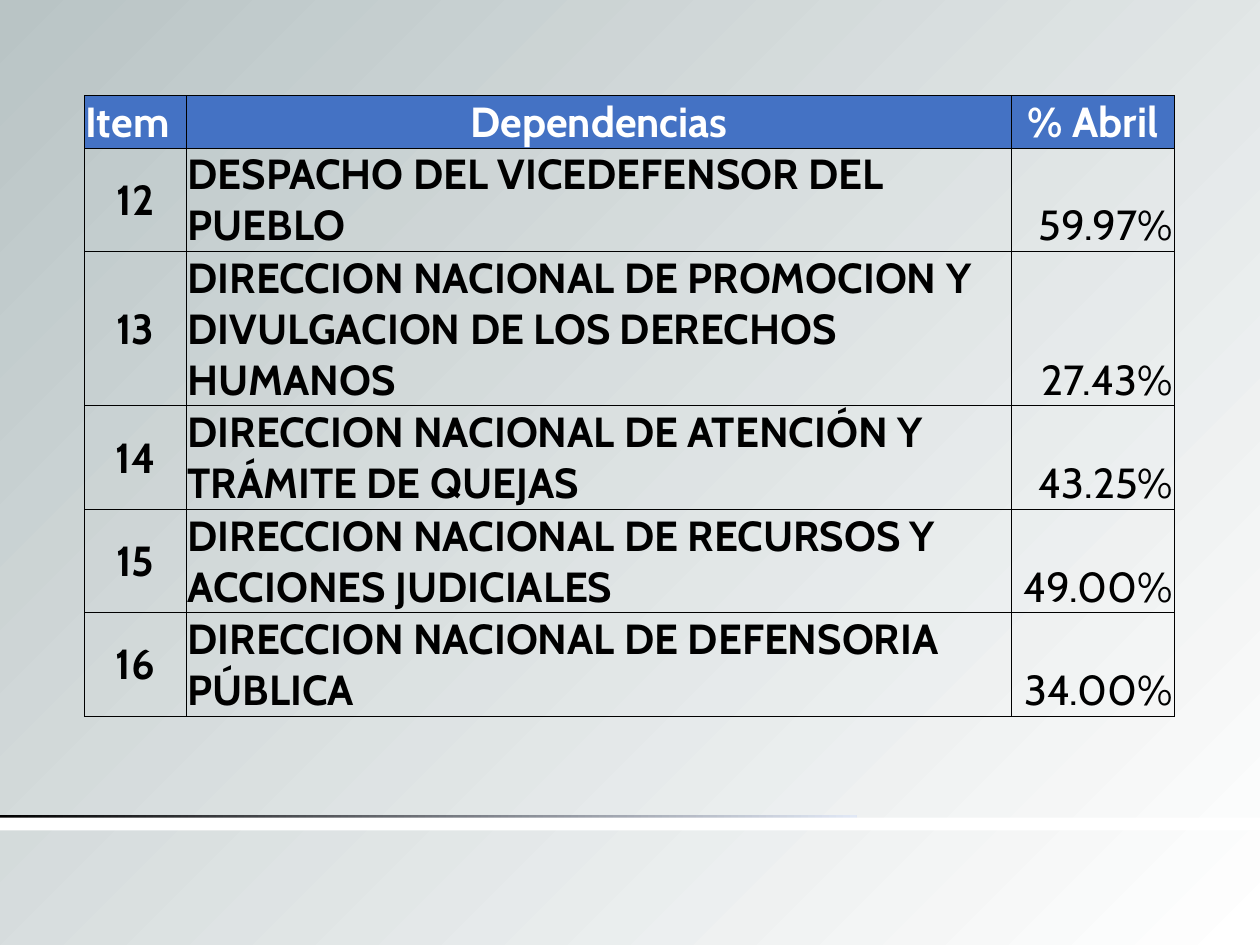
from dataclasses import dataclass

from lxml import etree
from pptx import Presentation
from pptx.dml.color import RGBColor
from pptx.enum.shapes import MSO_SHAPE
from pptx.enum.text import MSO_ANCHOR, PP_ALIGN
from pptx.oxml.ns import qn
from pptx.util import Inches, Pt

RECT = MSO_SHAPE.RECTANGLE
LEFT, CENTER, RIGHT = PP_ALIGN.LEFT, PP_ALIGN.CENTER, PP_ALIGN.RIGHT
MIDDLE, BOTTOM = MSO_ANCHOR.MIDDLE, MSO_ANCHOR.BOTTOM


@dataclass(frozen=True)
class Theme:
    font: str = "Cabin"
    size: int = 24
    text: str = "000000"
    light: str = "FFFFFF"
    header: str = "4472C4"
    shade: str = "B9C4C5"
    rule_end: str = "E1E8F5"
    border: float = 0.5
    inset: float = 0.01


class SlideBuilder:
    """Draws on one slide; lengths are shares of the slide's size."""

    def __init__(self, prs, theme):
        self.theme = theme
        self.width, self.height = prs.slide_width, prs.slide_height
        self.slide = prs.slides.add_slide(prs.slide_layouts[6])

    def x(self, share):
        return round(self.width * share)

    def y(self, share):
        return round(self.height * share)

    def gradient(self, fill, *colors):
        fill.gradient()
        for stop, color in zip(fill.gradient_stops, colors):
            stop.color.rgb = RGBColor.from_string(color)

    def background(self, focus, edge):
        """Circular gradient spreading from the bottom right corner."""
        bg = self.slide.background
        self.gradient(bg.fill, focus, edge)
        lin = next(self.slide.element.iter(qn("a:lin")))
        path = etree.Element(qn("a:path"), path="circle")
        etree.SubElement(path, qn("a:fillToRect"), l="100000", t="100000")
        lin.getparent().replace(lin, path)

    def bar(self, top, width, height, *colors):
        sp = self.slide.shapes.add_shape(
            RECT, 0, self.y(top), self.x(width), self.y(height))
        sp.shadow.inherit = False
        sp.line.fill.background()
        if len(colors) > 1:
            self.gradient(sp.fill, *colors)
            sp.fill.gradient_angle = 0
        else:
            sp.fill.solid()
            sp.fill.fore_color.rgb = RGBColor.from_string(colors[0])

    def cell_borders(self, cell):
        tc_pr = cell._tc.get_or_add_tcPr()
        for side in ("lnL", "lnR", "lnT", "lnB"):
            ln = etree.SubElement(tc_pr, qn(f"a:{side}"),
                                  w=str(int(Pt(self.theme.border))))
            fill = etree.SubElement(ln, qn("a:solidFill"))
            etree.SubElement(fill, qn("a:srgbClr"), val=self.theme.text)

    def cell(self, cell, text, align, anchor, bold, color, fill=None):
        self.cell_borders(cell)
        if fill:
            cell.fill.solid()
            cell.fill.fore_color.rgb = RGBColor.from_string(fill)
        else:
            cell.fill.background()
        inset = Inches(self.theme.inset)
        cell.margin_left = cell.margin_right = cell.margin_top = inset
        cell.margin_bottom = 0
        cell.vertical_anchor = anchor
        p = cell.text_frame.paragraphs[0]
        p.text = text
        p.alignment = align
        font = p.runs[0].font
        font.name, font.size, font.bold = self.theme.font, Pt(self.theme.size), bold
        font.color.rgb = RGBColor.from_string(color)

    def table(self, left, top, columns, line, header, rows):
        """Each row is its cell texts and the number of text lines it needs."""
        t = self.theme
        lines = [1] + [count for _, count in rows]
        frame = self.slide.shapes.add_table(
            len(lines), len(columns), self.x(left), self.y(top),
            self.x(sum(columns)), self.y(line * sum(lines)))
        table = frame.table
        table.horz_banding = False
        for column, share in zip(table.columns, columns):
            column.width = self.x(share)
        for row, count in zip(table.rows, lines):
            row.height = self.y(line * count)

        head_style = [(LEFT, BOTTOM), (CENTER, MIDDLE), (CENTER, MIDDLE)]
        for c, (text, style) in enumerate(zip(header, head_style)):
            self.cell(table.cell(0, c), text, *style, True, t.light, t.header)

        body_style = [(CENTER, MIDDLE, True), (LEFT, MIDDLE, True),
                      (RIGHT, BOTTOM, False)]
        for r, (texts, _) in enumerate(rows, start=1):
            for c, (text, style) in enumerate(zip(texts, body_style)):
                self.cell(table.cell(r, c), text, *style, t.text)


HEADER = ("Item", "Dependencias", "% Abril")
ROWS = [
    (("12", "DESPACHO DEL VICEDEFENSOR DEL PUEBLO", "59.97%"), 2),
    (("13", "DIRECCION NACIONAL DE PROMOCION Y DIVULGACION DE LOS "
            "DERECHOS HUMANOS", "27.43%"), 3),
    (("14", "DIRECCION NACIONAL DE ATENCIÓN Y TRÁMITE DE QUEJAS", "43.25%"), 2),
    (("15", "DIRECCION NACIONAL DE RECURSOS Y ACCIONES JUDICIALES", "49.00%"), 2),
    (("16", "DIRECCION NACIONAL DE DEFENSORIA PÚBLICA", "34.00%"), 2),
]


def main():
    prs = Presentation()
    prs.slide_width, prs.slide_height = Inches(10), Inches(7.5)
    theme = Theme()
    s = SlideBuilder(prs, theme)

    # Background and the double rule near the foot
    s.background(theme.light, theme.shade)
    s.bar(6.47 / 7.5, 0.68, 0.05 / 7.5, theme.text, theme.rule_end)
    s.bar(6.49 / 7.5, 1, 0.1 / 7.5, theme.light)

    # Results by department
    s.table(0.67 / 10, 0.76 / 7.5, (0.081, 0.655, 0.129), 0.4 / 7.5, HEADER, ROWS)

    prs.save("out.pptx")


if __name__ == "__main__":
    main()
